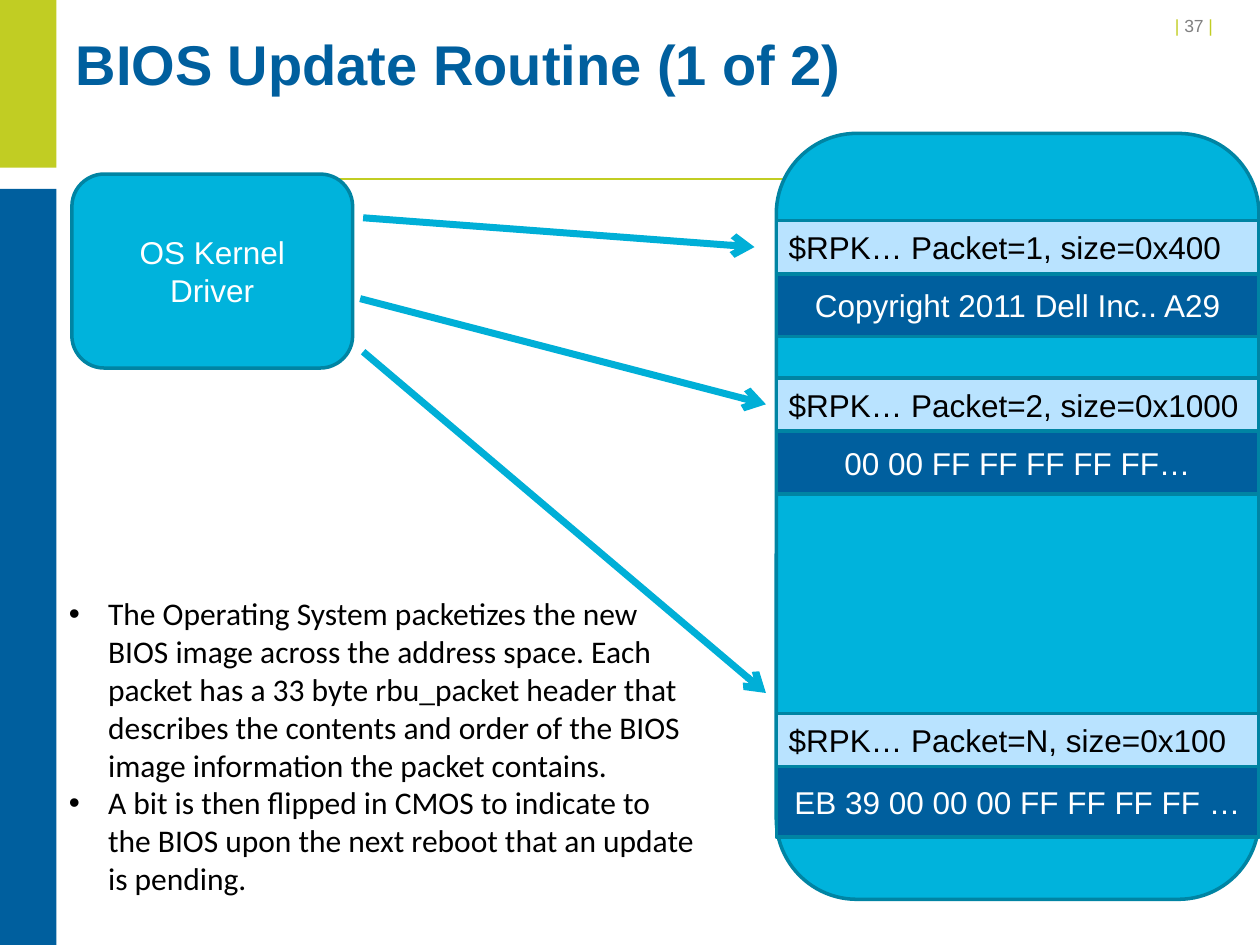
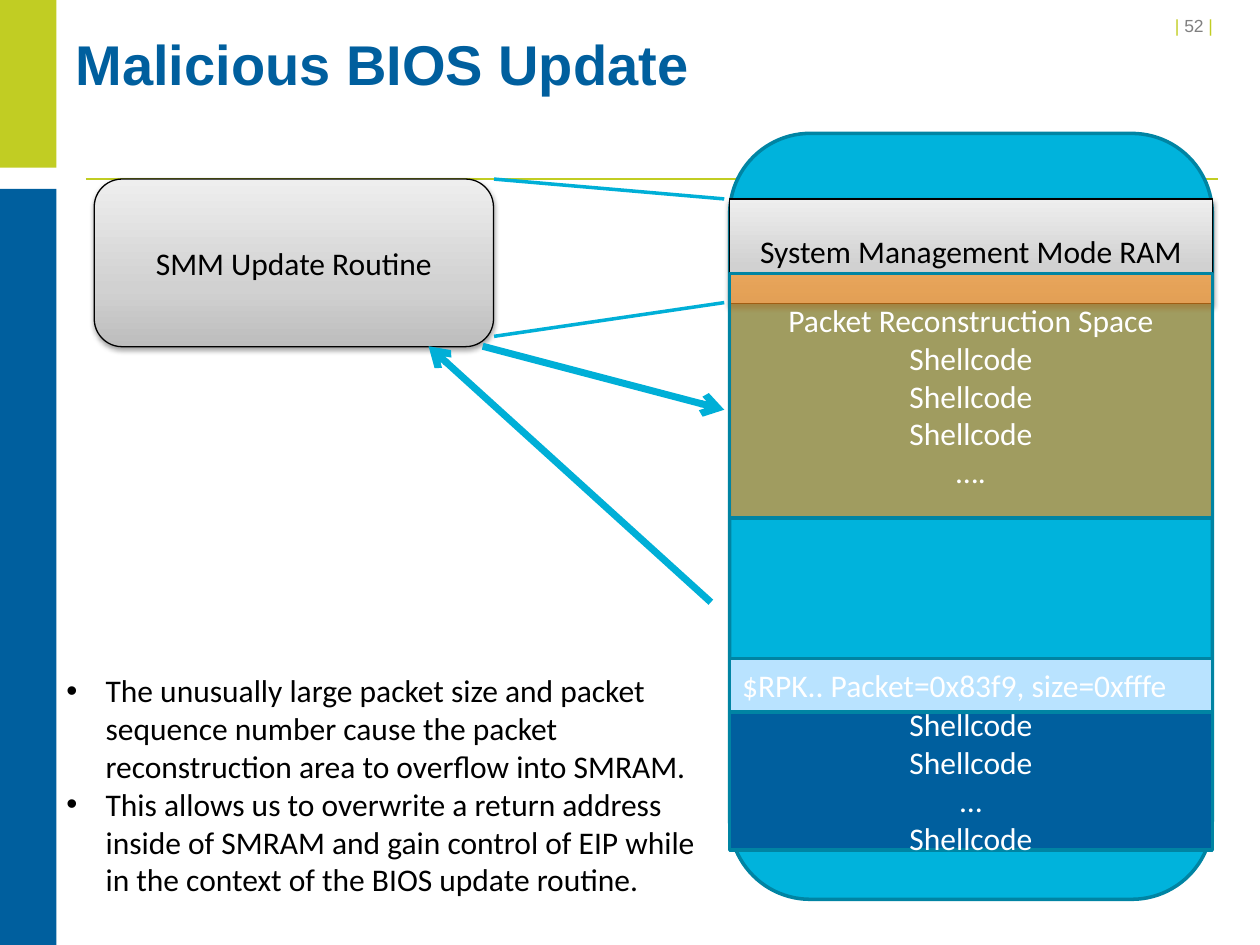
import lxml.etree
import pptx
import pptx.dml.color
import pptx.enum.shapes
import pptx.enum.text
import pptx.oxml
import pptx.oxml.ns
import pptx.util

Cm, Pt = pptx.util.Cm, pptx.util.Pt
RGB = pptx.dml.color.RGBColor
SHAPE = pptx.enum.shapes.MSO_SHAPE
ALIGN = pptx.enum.text.PP_ALIGN
ANCHOR = pptx.enum.text.MSO_ANCHOR
qn = pptx.oxml.ns.qn

LIME = RGB(0xC1, 0xCD, 0x23)
NAVY = RGB(0x00, 0x5F, 0x9E)
CYAN = RGB(0x00, 0xB3, 0xDC)
TEAL = RGB(0x00, 0x84, 0xA3)
ARROW = RGB(0x00, 0xAF, 0xD7)
PALE = RGB(0xB9, 0xE3, 0xFF)
ORANGE = RGB(0xF7, 0x90, 0x1E)
GRAY = RGB(0x80, 0x80, 0x80)
BLACK = RGB(0, 0, 0)
WHITE = RGB(255, 255, 255)
SILVER = ((0, "BDBDBD"), (35, "D1D1D1"), (100, "EEEEEE"))

# Lengths are centimetres; boxes are (left, top, width, height).
MEMORY_TOP, MEMORY_WIDTH, MEMORY_HEIGHT = 2.69, 9.73, 15.44
HEADER_HEIGHT = 1.07

ROUTINE = {
    "title": "BIOS Update Routine (1 of 2)",
    "page": 37,
    "font": "Arial",
    "header_color": BLACK,
    "memory_left": 15.65,
    # header top, header, data height, data lines
    "packets": [
        (4.45, "$RPK… Packet=1, size=0x400", 1.27, ["Copyright 2011 Dell Inc.. A29"]),
        (7.62, "$RPK… Packet=2, size=0x1000", 1.27, ["00 00 FF FF FF FF FF…"]),
        (14.38, "$RPK… Packet=N, size=0x100", 1.42, ["EB 39 00 00 00 FF FF FF FF …"]),
    ],
    # start, end, width in points, arrowhead
    "lines": [
        ((7.32, 4.39), (15.21, 4.98), 4, True),
        ((7.26, 6.02), (15.44, 8.15), 4, True),
        ((7.32, 7.09), (15.44, 13.97), 4, True),
    ],
    "notes_box": (1.14, 11.86, 13.21, 7.19),
    "notes": [
        "The Operating System packetizes the new BIOS image across the address space. "
        "Each packet has a 33 byte rbu_packet header that describes the contents and "
        "order of the BIOS image information the packet contains.",
        "A bit is then flipped in CMOS to indicate to the BIOS upon the next reboot "
        "that an update is pending.",
    ],
}
MALICIOUS = {
    "title": "Malicious BIOS Update",
    "page": 52,
    "font": "Calibri",
    "header_color": WHITE,
    "memory_left": 14.71,
    "packets": [
        (13.28, "$RPK.. Packet=0x83f9, size=0xfffe", 2.79,
         ["Shellcode", "Shellcode", "…", "Shellcode"]),
    ],
    "lines": [
        ((14.33, 12.14), (8.64, 6.98), 4, True),
        ((14.6, 4.01), (9.96, 3.61), 2, False),
        ((14.6, 6.1), (9.96, 6.78), 2, False),
        ((9.73, 6.98), (14.6, 8.26), 4, True),
    ],
    "notes_box": (1.09, 13.41, 13.21, 5.64),
    "notes": [
        "The unusually large packet size and packet sequence number cause the packet "
        "reconstruction area to overflow into SMRAM.",
        "This allows us to overwrite a return address inside of SMRAM and gain control "
        "of EIP while in the context of the BIOS update routine.",
    ],
}
DRIVER = ("OS Kernel Driver", (1.45, 3.51, 5.66, 3.91))
SMM_ROUTINE = ("SMM Update Routine", (1.9, 3.61, 8.05, 3.38))
SMRAM = ("System Management Mode RAM", (14.71, 4.01, MEMORY_WIDTH, 2.11))
RECONSTRUCTION = (
    ["Packet Reconstruction Space", "Shellcode", "Shellcode", "Shellcode", "…."],
    (14.71, 5.51, MEMORY_WIDTH, 4.93),
)


def write(sp, paragraphs, font="Calibri", size=18, color=BLACK, bold=False,
          align=ALIGN.LEFT, anchor=ANCHOR.MIDDLE, bullet=False, after=0, spacing=None):
    """Fill a shape with paragraphs, each a string or a list of (text, colour) runs."""
    tf = sp.text_frame
    tf.word_wrap = True
    tf.vertical_anchor = anchor
    for i, content in enumerate(paragraphs):
        p = tf.add_paragraph() if i else tf.paragraphs[0]
        p.alignment = align
        p.space_before, p.space_after = Pt(0), Pt(after)
        if spacing:
            p.line_spacing = Pt(spacing)
        if bullet:
            pPr = p._p.get_or_add_pPr()
            pPr.set("marL", str(Cm(0.79)))
            pPr.set("indent", str(-Cm(0.79)))
            lxml.etree.SubElement(pPr, qn("a:buFont")).set("typeface", "Arial")
            lxml.etree.SubElement(pPr, qn("a:buChar")).set("char", "•")
        runs = [(content, color)] if isinstance(content, str) else content
        for text, run_color in runs:
            r = p.add_run()
            r.text = text
            r.font.name, r.font.size, r.font.bold = font, Pt(size), bold
            r.font.color.rgb = run_color


def add_box(s, box, fill, line=TEAL, width=2, kind=SHAPE.RECTANGLE):
    sp = s.shapes.add_shape(kind, *map(Cm, box))
    sp.shadow.inherit = False
    sp.fill.solid()
    sp.fill.fore_color.rgb = fill
    if line is None:
        sp.line.fill.background()
    else:
        sp.line.color.rgb, sp.line.width = line, Pt(width)
    return sp


def add_text(s, box, paragraphs, **fmt):
    sp = s.shapes.add_textbox(*map(Cm, box))
    write(sp, paragraphs, anchor=ANCHOR.TOP, **fmt)


def add_line(s, start, end, color, width, arrow=False):
    c = s.shapes.add_connector(pptx.enum.shapes.MSO_CONNECTOR.STRAIGHT,
                               *map(Cm, start + end))
    c.line.color.rgb, c.line.width = color, Pt(width)
    if arrow:
        lxml.etree.SubElement(c.line._get_or_add_ln(), qn("a:tailEnd")).set("type", "arrow")
    lxml.etree.SubElement(c.element.spPr, qn("a:effectLst"))
    return c


def add_silver_box(s, label, box, kind):
    """Add a box with a grey gradient, a thin outline and a soft shadow below."""
    sp = add_box(s, box, WHITE, BLACK, 0.75, kind)
    ns = pptx.oxml.ns.nsdecls("a")
    stops = "".join(f'<a:gs pos="{pos * 1000}"><a:srgbClr val="{color}"/></a:gs>'
                    for pos, color in SILVER)
    spPr = sp.element.spPr
    spPr.replace(spPr.find(qn("a:solidFill")), pptx.oxml.parse_xml(
        f'<a:gradFill {ns}><a:gsLst>{stops}</a:gsLst><a:lin ang="16200000"/></a:gradFill>'))
    spPr.find(qn("a:effectLst")).append(pptx.oxml.parse_xml(
        f'<a:outerShdw {ns} blurRad="40000" dist="20000" dir="5400000" rotWithShape="0">'
        '<a:srgbClr val="000000"><a:alpha val="38000"/></a:srgbClr></a:outerShdw>'))
    write(sp, [label], align=ALIGN.CENTER)


def decorate_layout(s):
    """Draw the shared bands and rule, then move them to the slide's layout."""
    tree = s.slide_layout.shapes.element
    for sp in (add_line(s, (1.73, 3.61), (24.56, 3.61), LIME, 1),
               add_box(s, (0, 0, 1.14, 3.38), LIME, None),
               add_box(s, (0, 3.81, 1.14, 15.24), NAVY, None)):
        tree.append(sp.element)


def add_title(s, text):
    title = s.shapes.title
    title.left, title.top, title.width, title.height = map(Cm, (1.27, 0.43, 22.86, 1.93))
    write(title, [text], font="Arial", size=32, color=NAVY, bold=True, spacing=32)


def add_memory(s, content):
    """Draw the address space with its packets, each a header over its data."""
    left, font = content["memory_left"], content["font"]
    add_box(s, (left, MEMORY_TOP, MEMORY_WIDTH, MEMORY_HEIGHT), CYAN,
            kind=SHAPE.ROUNDED_RECTANGLE)
    for top, header, data_height, data in content["packets"]:
        sp = add_box(s, (left, top, MEMORY_WIDTH, HEADER_HEIGHT), PALE)
        write(sp, [header], font=font, color=content["header_color"])
        sp = add_box(s, (left, top + HEADER_HEIGHT, MEMORY_WIDTH, data_height), NAVY)
        write(sp, data, font=font, color=WHITE, align=ALIGN.CENTER)


def add_driver(s):
    label, box = DRIVER
    sp = add_box(s, box, CYAN, kind=SHAPE.ROUNDED_RECTANGLE)
    write(sp, [label], font="Arial", color=WHITE, align=ALIGN.CENTER)


def add_smm(s):
    add_silver_box(s, *SMRAM, SHAPE.RECTANGLE)
    add_silver_box(s, *SMM_ROUTINE, SHAPE.ROUNDED_RECTANGLE)


def add_reconstruction(s):
    lines, box = RECONSTRUCTION
    sp = add_box(s, box, ORANGE)
    color = sp.element.spPr.find(qn("a:solidFill"))[0]
    lxml.etree.SubElement(color, qn("a:alpha")).set("val", "65000")
    write(sp, lines, color=WHITE, align=ALIGN.CENTER)


def add_slide(prs, content, add_source):
    s = prs.slides.add_slide(prs.slide_layouts[5])
    add_title(s, content["title"])
    add_text(s, (20.35, 0.18, 4.45, 0.69),
             [[("| ", LIME), (f"{content['page']} ", GRAY), ("| ", LIME)]],
             font="Arial", size=10, align=ALIGN.RIGHT, after=6)
    add_memory(s, content)
    add_source(s)
    for start, end, width, arrow in content["lines"]:
        add_line(s, start, end, ARROW, width, arrow)
    add_text(s, content["notes_box"], content["notes"], bullet=True)
    return s


def main():
    prs = pptx.Presentation()
    prs.slide_width, prs.slide_height = Cm(25.4), Cm(19.05)
    decorate_layout(add_slide(prs, ROUTINE, add_driver))
    add_reconstruction(add_slide(prs, MALICIOUS, add_smm))
    prs.save("out.pptx")


if __name__ == "__main__":
    main()
